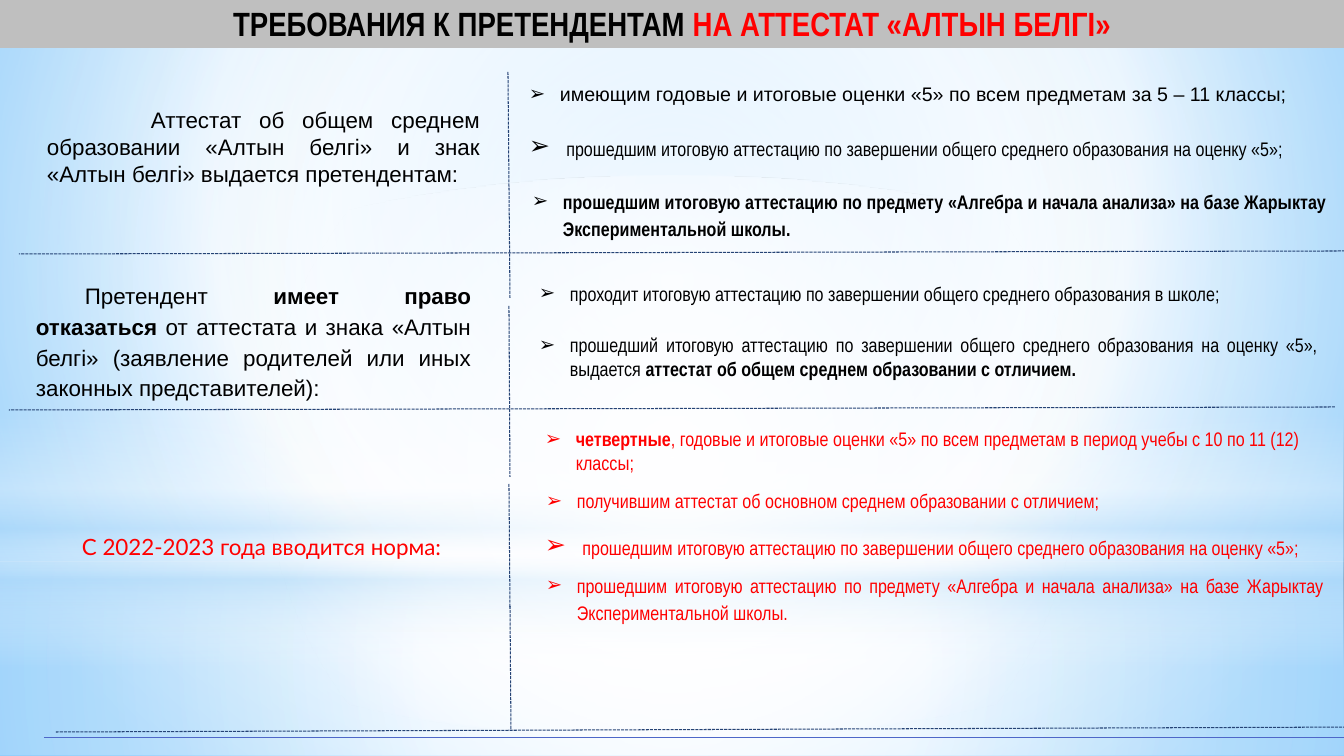
from dataclasses import dataclass

import pptx
import pptx.dml.color
import pptx.enum.dml
import pptx.enum.shapes
import pptx.enum.text
import pptx.oxml
import pptx.oxml.ns
import pptx.util


@dataclass(frozen=True)
class Theme:
    black: str = "000000"
    red: str = "FF0000"
    bar: str = "BFBFBF"
    navy: str = "254375"
    blue: str = "4E67C8"
    white: str = "FFFFFF"
    sky: str = "B4DCFA"
    pale: str = "9ED5FF"
    deep: str = "5BB9FF"
    sans: str = "Arial"
    slim: str = "Arial Narrow"
    lato: str = "Lato"
    head: int = 24
    wide: int = 18
    lead: int = 16
    body: int = 14


look = Theme()
PX = 914400 / 100.8
rgb = pptx.dml.color.RGBColor.from_string
qn = pptx.oxml.ns.qn
xmlns = pptx.oxml.ns.nsdecls("a")
kinds = pptx.enum.shapes.MSO_SHAPE
align = pptx.enum.text.PP_ALIGN


def glow(node, stops, rect=None):
    """Swap the gradient in node for these stops: radial to rect, or vertical."""
    marks = "".join(
        f'<a:gs pos="{at * 1000}"><a:srgbClr val="{color}">'
        f'<a:alpha val="{alpha * 1000}"/></a:srgbClr></a:gs>'
        for at, color, alpha in stops)
    if rect:
        sides = " ".join(f'{side}="{part * 1000}"' for side, part in zip("ltrb", rect))
        way = f'<a:path path="circle"><a:fillToRect {sides}/></a:path>'
    else:
        way = '<a:lin ang="5400000" scaled="0"/>'
    old = next(node.iter(qn("a:gradFill")))
    old.getparent().replace(old, pptx.oxml.parse_xml(
        f'<a:gradFill {xmlns} rotWithShape="1"><a:gsLst>{marks}</a:gsLst>{way}</a:gradFill>'))


def write(shape, runs, size=look.body, font=look.slim, color=look.black, bold=False,
          side=align.LEFT, space=1.0, indent=0, bullet=False):
    """Fill shape with one paragraph; a run is (text, changes to the format)."""
    frame = shape.text_frame
    frame.word_wrap = True
    frame.auto_size = pptx.enum.text.MSO_AUTO_SIZE.NONE
    para = frame.paragraphs[0]
    para.alignment = side
    para.line_spacing = space
    props = para._p.get_or_add_pPr()
    props.set("marL", str(round(31 * PX) if bullet else 0))
    props.set("indent", str(round((-31 if bullet else indent) * PX)))
    if bullet:
        props.append(pptx.oxml.parse_xml(f'<a:buFont {xmlns} typeface="{look.sans}"/>'))
        props.append(pptx.oxml.parse_xml(f'<a:buChar {xmlns} char="➢"/>'))
    for text, change in runs:
        run = para.add_run()
        run.text = text
        run.font.size = pptx.util.Pt(change.get("size", size))
        run.font.name = change.get("font", font)
        run.font.bold = change.get("bold", bold)
        run.font.color.rgb = rgb(change.get("color", color))


deck = pptx.Presentation()
deck.slide_width = round(1344 * PX)
deck.slide_height = round(756 * PX)
slide = deck.slides.add_slide(deck.slide_layouts[5])

# Backdrop
slide.background.fill.gradient()
glow(slide.element, [(0, look.pale, 100), (60, look.white, 100), (100, look.deep, 100)],
     (20, 10, 20, 60))
mid = (50, 50, 50, 50)
layers = [
    (kinds.RECTANGLE, 562, 194,
     [(0, look.white, 91), (37, look.white, 76), (100, look.sky, 79)], mid),
    (kinds.RECTANGLE, 0, 562,
     [(0, look.white, 89), (48, look.white, 62), (100, look.sky, 79)], mid),
    (kinds.RECTANGLE, 415, 252,
     [(0, look.white, 0), (29, look.white, 30), (45, look.sky, 40),
      (55, look.white, 26), (65, look.sky, 60), (100, look.white, 0)], None),
    (kinds.OVAL, 176, 562, [(0, look.white, 100), (56, look.white, 0)], mid),
]
for kind, top, high, stops, rect in layers:
    layer = slide.shapes.add_shape(kind, 0, round(top * PX), deck.slide_width, round(high * PX))
    layer.shadow.inherit = False
    layer.line.fill.background()
    layer.fill.gradient()
    glow(layer.element, stops, rect)

# Title bar, in front of the backdrop
title = slide.shapes.title
title.element.getparent().append(title.element)
title.left, title.top, title.width, title.height = (
    round(n * PX) for n in (0, -2, 1344, 50))
title.fill.solid()
title.fill.fore_color.rgb = rgb(look.bar)
title.text_frame.vertical_anchor = pptx.enum.text.MSO_ANCHOR.MIDDLE
write(title, [("ТРЕБОВАНИЯ К ПРЕТЕНДЕНТАМ ", {}),
              ("НА АТТЕСТАТ «АЛТЫН БЕЛГІ»", {"color": look.red})],
      size=look.head, bold=True, side=align.CENTER)

# Dividers
dash = pptx.enum.dml.MSO_LINE.SQUARE_DOT
lines = [
    (1345, 251, 19, 254, look.navy, dash),
    (508, 72, 510, 298, look.navy, dash),
    (509, 306, 510, 477, look.navy, dash),
    (1335, 407, 9, 410, look.navy, dash),
    (509, 484, 510, 607, look.navy, dash),
    (1367, 727, 56, 732, look.navy, dash),
    (510, 606, 511, 730, look.navy, dash),
    (44, 738, 1345, 738, look.blue, None),
]
for *ends, color, style in lines:
    line = slide.shapes.add_connector(
        pptx.enum.shapes.MSO_CONNECTOR.STRAIGHT, *(round(n * PX) for n in ends))
    line.line.color.rgb = rgb(color)
    line.line.width = pptx.util.Pt(0.75)
    if style:
        line.line.dash_style = style
    line.element.spPr.append(pptx.oxml.parse_xml(f'<a:effectLst {xmlns}/>'))

# Conditions on the left, demands on the right
final = [(" ", {"size": look.wide, "font": look.lato}),
         ("прошедшим итоговую аттестацию по завершении общего среднего образования "
          "на оценку «5»;", {})]
maths = [("прошедшим итоговую аттестацию по предмету «Алгебра и начала анализа» "
          "на базе Жарыктау Экспериментальной школы.", {})]
lead = dict(size=look.lead, font=look.sans, side=align.JUSTIFY)
item = dict(bullet=True)
even = dict(bullet=True, side=align.JUSTIFY)
fresh = dict(bullet=True, color=look.red)
boxes = [
    ((37, 101, 453, 92),
     [("Аттестат об общем среднем образовании «Алтын белгі» и знак «Алтын белгі» "
       "выдается претендентам:", {})], dict(lead, indent=104)),
    ((26, 273, 455, 135),
     [("Претендент ", {}), ("имеет право отказаться ", {"bold": True}),
      ("от аттестата и знака «Алтын белгі» (заявление родителей или иных законных "
       "представителей):", {})], dict(lead, indent=49, space=1.15)),
    ((37, 524, 455, 41), [("C 2022-2023 года вводится норма:", {})],
     dict(size=look.lead, font=look.lato, color=look.red, indent=35, space=1.15)),
    ((519, 77, 823, 34),
     [("имеющим годовые и итоговые оценки «5» по всем предметам за 5 – 11 классы;", {})],
     dict(item, font=look.sans)),
    ((519, 126, 809, 40), final, item),
    ((522, 181, 815, 92), maths, dict(even, bold=True, space=1.15)),
    ((529, 273, 799, 37),
     [("проходит итоговую аттестацию по завершении общего среднего образования "
       "в школе;", {})], dict(even, space=1.15)),
    ((529, 328, 799, 57),
     [("прошедший итоговую аттестацию по завершении общего среднего образования "
       "на оценку «5», выдается ", {}),
      ("аттестат об общем среднем образовании с отличием.", {"bold": True})], even),
    ((535, 422, 793, 57),
     [("четвертные", {"bold": True}),
      (", годовые и итоговые оценки «5» по всем предметам в период учебы "
       "с 10 по 11 (12) классы;", {})], fresh),
    ((536, 484, 791, 34),
     [("получившим аттестат об основном среднем образовании с отличием;", {})], fresh),
    ((535, 525, 825, 40), final, fresh),
    ((536, 565, 798, 92), maths, dict(fresh, side=align.JUSTIFY, space=1.15)),
]
for place, runs, form in boxes:
    box = slide.shapes.add_textbox(*(round(n * PX) for n in place))
    write(box, runs, **form)

deck.save("out.pptx")
